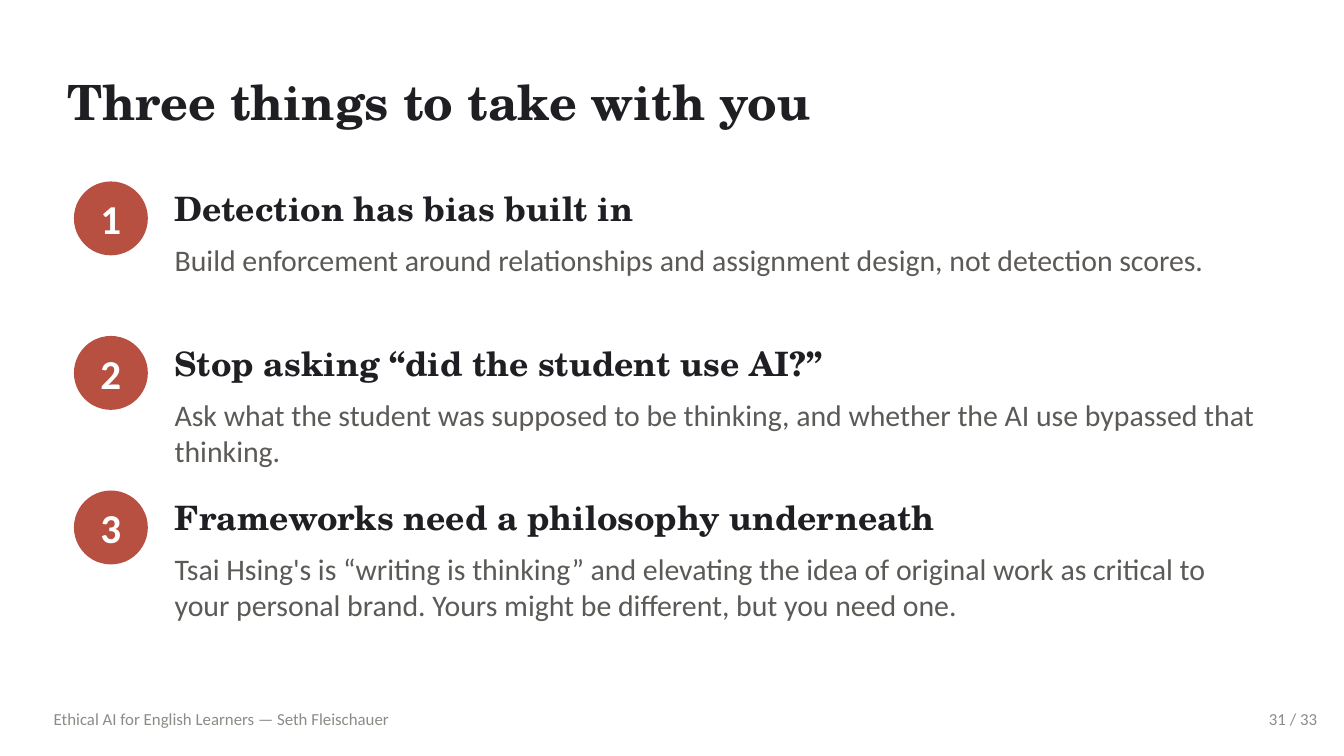
from pptx import Presentation
from pptx import util as u
from pptx.dml.color import RGBColor
from pptx.enum import shapes, text

COLORS = {
    "ink": "1F1F23",
    "body": "5C5A57",
    "muted": "8E8B86",
    "accent": "B85042",
    "white": "FFFFFF",
}
SERIF, SANS = "TeX Gyre Schola", "Calibri"
LEFT, CENTER, RIGHT = text.PP_ALIGN.LEFT, text.PP_ALIGN.CENTER, text.PP_ALIGN.RIGHT
TOP, MIDDLE = text.MSO_ANCHOR.TOP, text.MSO_ANCHOR.MIDDLE


class Deck:
    """Holds the style and the current slide; all lengths are in points."""

    def __init__(self, width, height):
        self.prs = Presentation()
        self.prs.slide_width, self.prs.slide_height = u.Pt(width), u.Pt(height)
        self.s = self.prs.slides.add_slide(self.prs.slide_layouts[6])
        self.background("white")

    def background(self, color):
        fill = self.s.background.fill
        fill.solid()
        fill.fore_color.rgb = RGBColor.from_string(COLORS[color])

    def label(self, box, words, size, color, font=SANS, bold=False,
              align=LEFT, anchor=MIDDLE):
        tf = self.s.shapes.add_textbox(*map(u.Pt, box)).text_frame
        tf.word_wrap = True
        tf.margin_left = tf.margin_top = tf.margin_right = tf.margin_bottom = 0
        tf.vertical_anchor = anchor
        tf.text = words
        p = tf.paragraphs[0]
        p.alignment = align
        r = p.runs[0]
        r.font.name, r.font.size, r.font.bold = font, u.Pt(size), bold
        r.font.color.rgb = RGBColor.from_string(COLORS[color])

    def heading(self, box, words, size):
        self.label(box, words, size, "ink", SERIF, bold=True)

    def badge(self, x, y, size, number):
        box = (x, y, size, size)
        sp = self.s.shapes.add_shape(shapes.MSO_SHAPE.OVAL, *map(u.Pt, box))
        sp.shadow.inherit = False
        sp.fill.solid()
        sp.fill.fore_color.rgb = RGBColor.from_string(COLORS["accent"])
        sp.line.fill.background()
        self.label(box, str(number), 22, "white", bold=True, align=CENTER)

    def takeaway(self, y, number, title, detail):
        self.badge(39.6, y + 3.6, 39.6, number)
        self.heading((93.6, y, 583.2, 36), title, 18)
        self.label((93.6, y + 36, 583.2, 39.6), detail, 16, "body", anchor=TOP)

    def footer(self, left, right):
        self.label((648, 374.4, 57.6, 21.6), right, 9, "muted", align=RIGHT)
        self.label((28.8, 374.4, 504, 21.6), left, 9, "muted")


TAKEAWAYS = [
    ("Detection has bias built in",
     "Build enforcement around relationships and assignment design, "
     "not detection scores."),
    ("Stop asking “did the student use AI?”",
     "Ask what the student was supposed to be thinking, "
     "and whether the AI use bypassed that thinking."),
    ("Frameworks need a philosophy underneath",
     "Tsai Hsing's is “writing is thinking” and elevating the idea of original "
     "work as critical to your personal brand. Yours might be different, "
     "but you need one."),
]


def main():
    deck = Deck(720, 405)

    # Title
    deck.heading((36, 28.8, 482.4, 50.4), "Three things to take with you", 26)

    # Numbered takeaways, evenly spaced
    for i, (title, detail) in enumerate(TAKEAWAYS):
        deck.takeaway(93.6 + 82.8 * i, i + 1, title, detail)

    # Footer and page number
    deck.footer("Ethical AI for English Learners — Seth Fleischauer", "31 / 33")

    deck.prs.save("out.pptx")


if __name__ == "__main__":
    main()
